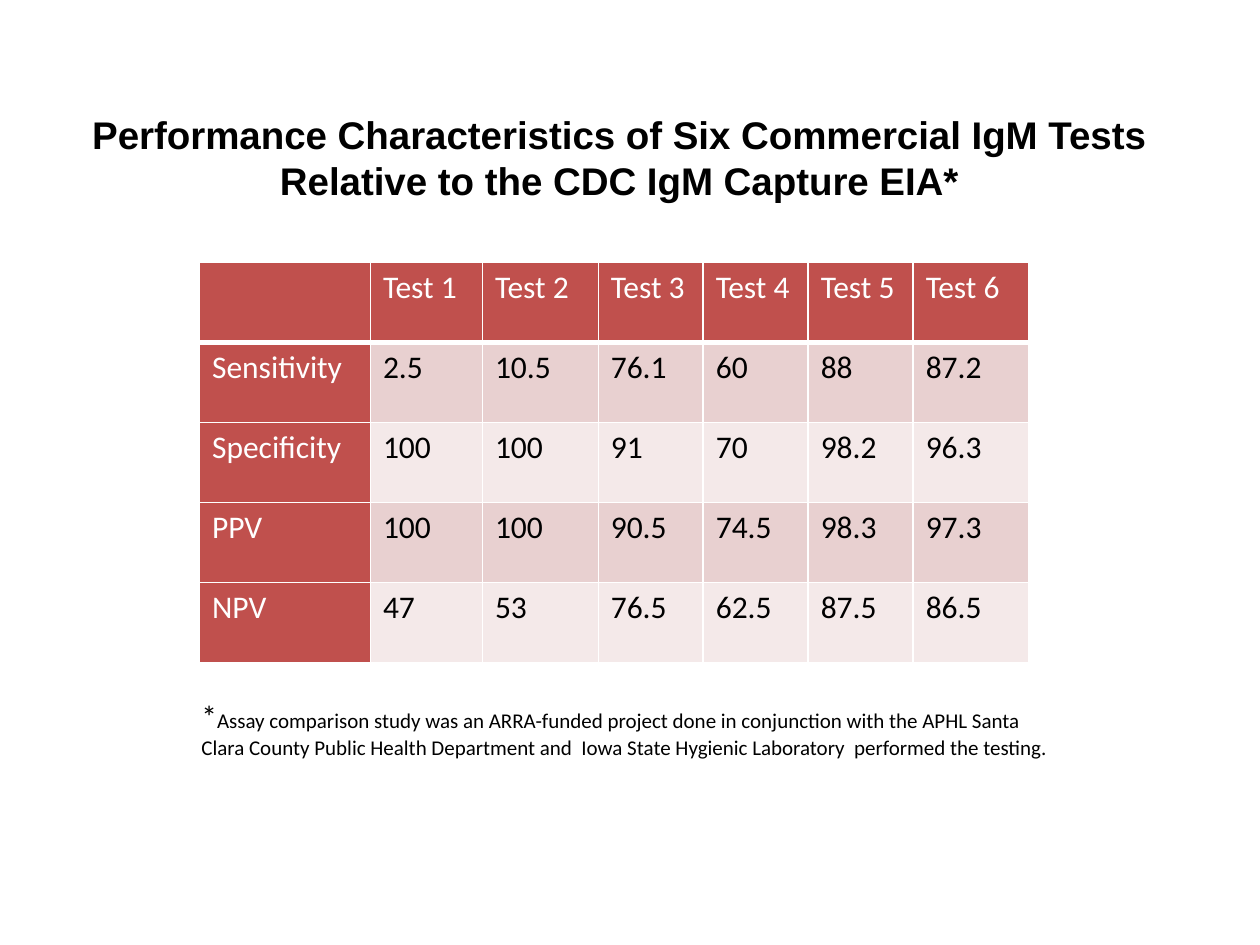
from lxml import etree
from pptx import Presentation
from pptx.dml.color import RGBColor
from pptx.enum.text import MSO_AUTO_SIZE, PP_ALIGN
from pptx.oxml.ns import qn
from pptx.util import Pt

LEFT, MID = PP_ALIGN.LEFT, PP_ALIGN.CENTER
GROW = MSO_AUTO_SIZE.SHAPE_TO_FIT_TEXT
BLACK = RGBColor(0, 0, 0)
WHITE = RGBColor(255, 255, 255)
RED = RGBColor(0xC0, 0x50, 0x4D)
ROSE = RGBColor(0xE8, 0xD0, 0xD0)
PALE = RGBColor(0xF4, 0xE9, 0xE9)

TITLE = ["Performance Characteristics of Six Commercial IgM Tests",
         "Relative to the CDC IgM Capture EIA*"]
NOTE = ("Assay comparison study was an ARRA-funded project done in conjunction "
        "with the APHL Santa Clara County Public Health Department and  "
        "Iowa State Hygienic Laboratory  performed the testing.")
ROWS = [
    [""] + [f"Test {n}" for n in range(1, 7)],
    ["Sensitivity", "2.5", "10.5", "76.1", "60", "88", "87.2"],
    ["Specificity", "100", "100", "91", "70", "98.2", "96.3"],
    ["PPV", "100", "100", "90.5", "74.5", "98.3", "97.3"],
    ["NPV", "47", "53", "76.5", "62.5", "87.5", "86.5"],
]
WIDTHS = [97.7, 64, 66.2, 60, 60, 60, 66]


def add_run(para, text, size, font="Calibri", color=BLACK, bold=False):
    """Add one styled run to a paragraph."""
    run = para.add_run()
    run.text = text
    run.font.size = Pt(size)
    run.font.name = font
    run.font.bold = bold
    run.font.color.rgb = color


def add_box(slide, box, wrap):
    """Add a text box that grows with its text and return its frame."""
    frame = slide.shapes.add_textbox(*map(Pt, box)).text_frame
    frame.word_wrap = wrap
    frame.auto_size = GROW
    return frame


def add_title(slide, box):
    """Add the two-line title."""
    frame = add_box(slide, box, False)
    first, second = frame.paragraphs[0], frame.add_paragraph()
    for para, text, align in zip((first, second), TITLE, (LEFT, MID)):
        para.alignment = align
        add_run(para, text, 22, "Arial", bold=True)


def set_edges(cell, base):
    """Draw white borders round a cell, with the given bottom width."""
    props = cell._tc.get_or_add_tcPr()
    for spot, (tag, width) in enumerate(
            [("a:lnL", 1), ("a:lnR", 1), ("a:lnT", 1), ("a:lnB", base)]):
        line = etree.Element(qn(tag), w=str(Pt(width)))
        fill = etree.SubElement(line, qn("a:solidFill"))
        etree.SubElement(fill, qn("a:srgbClr"), val=str(WHITE))
        props.insert(spot, line)


def add_grid(slide, box):
    """Add the table of test results."""
    shape = slide.shapes.add_table(len(ROWS), len(WIDTHS), *map(Pt, box))
    table = shape.table
    for col, width in zip(table.columns, WIDTHS):
        col.width = Pt(width)
    for r, row in enumerate(ROWS):
        table.rows[r].height = Pt(box[3] / len(ROWS))
        for c, text in enumerate(row):
            cell = table.cell(r, c)
            head = r == 0 or c == 0
            cell.fill.solid()
            cell.fill.fore_color.rgb = RED if head else ROSE if r % 2 else PALE
            set_edges(cell, 1 if r else 3)
            if text:
                add_run(cell.text_frame.paragraphs[0], text, 18,
                        color=WHITE if head else BLACK)


def add_note(slide, box):
    """Add the footnote with its large asterisk."""
    para = add_box(slide, box, True).paragraphs[0]
    add_run(para, "*", 18)
    add_run(para, NOTE, 12)


def main():
    """Build and save the slide."""
    deck = Presentation()
    deck.slide_width, deck.slide_height = Pt(720), Pt(540)
    slide = deck.slides.add_slide(deck.slide_layouts[6])
    add_grid(slide, (114, 150, sum(WIDTHS), 228.6))
    add_title(slide, (45.6, 60, 630.5, 60.6))
    add_note(slide, (108, 394.5, 506, 44))
    deck.save("out.pptx")


if __name__ == "__main__":
    main()
